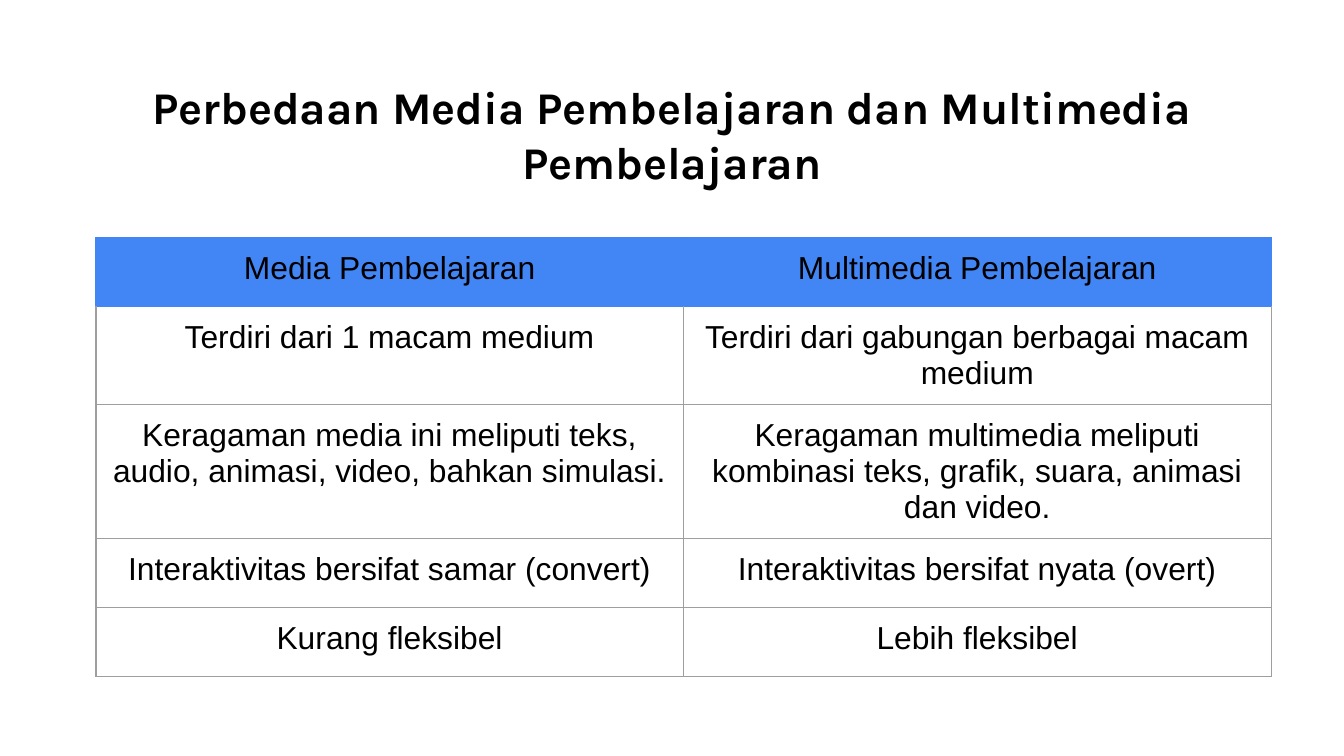
from typing import NamedTuple

from lxml.etree import SubElement
from pptx import Presentation
from pptx.dml.color import RGBColor
from pptx.enum.text import MSO_ANCHOR as Anchor, PP_ALIGN as Align
from pptx.oxml.ns import qn
from pptx.util import Pt

COLORS = {"text": "000000", "header": "4285F4", "grid": "9E9E9E"}
INSET = Pt(7.2)
MARGINS = {f"margin_{side}": INSET for side in ("left", "top", "right", "bottom")}
TITLE_FONT = {"name": "Karla", "size": Pt(24.3), "bold": True}
CELL_FONT = {"name": "Arial", "size": Pt(17), "bold": False}
COLUMN_WIDTH = Pt(314.8)


class Comparison(NamedTuple):
    media: str
    multimedia: str
    height: float


COMPARISONS = [
    Comparison("Media Pembelajaran", "Multimedia Pembelajaran", 37),
    Comparison("Terdiri dari 1 macam medium",
               "Terdiri dari gabungan berbagai macam medium", 51.5),
    Comparison("Keragaman media ini meliputi teks, audio, animasi, video, bahkan simulasi.",
               "Keragaman multimedia meliputi kombinasi teks, grafik, suara, animasi dan video.", 70),
    Comparison("Interaktivitas bersifat samar (convert)",
               "Interaktivitas bersifat nyata (overt)", 37),
    Comparison("Kurang fleksibel", "Lebih fleksibel", 37),
]


def apply_format(target, values: dict) -> None:
    for name, value in values.items():
        setattr(target, name, value)


def write_centered(text_frame, text: str, font_format: dict) -> None:
    text_frame.text = text
    paragraph = text_frame.paragraphs[0]
    paragraph.alignment = Align.CENTER
    font = paragraph.runs[0].font
    apply_format(font, font_format)
    font.color.rgb = RGBColor.from_string(COLORS["text"])


def set_borders(cell, colors: dict) -> None:
    """Draw the cell edges; colors maps L, R, T and B to a hex string."""
    properties = cell._tc.get_or_add_tcPr()
    for side, color in colors.items():
        line = SubElement(properties, qn(f"a:ln{side}"), w=str(Pt(0.75)))
        fill = SubElement(line, qn("a:solidFill"))
        SubElement(fill, qn("a:srgbClr"), val=color)


def add_title(slide, text: str) -> None:
    title = slide.shapes.title
    apply_format(title, {"left": Pt(24.5), "top": Pt(35.3),
                         "width": Pt(671), "height": Pt(45.4)})
    apply_format(title.text_frame, {**MARGINS, "word_wrap": True,
                                    "vertical_anchor": Anchor.TOP})
    write_centered(title.text_frame, text, TITLE_FONT)


def add_comparison_table(slide, comparisons: list[Comparison]) -> None:
    total_height = sum(comparison.height for comparison in comparisons)
    table = slide.shapes.add_table(len(comparisons), 2, Pt(51.4), Pt(127.2),
                                   2 * COLUMN_WIDTH, Pt(total_height)).table
    apply_format(table, {"first_row": False, "horz_banding": False})
    for column in table.columns:
        column.width = COLUMN_WIDTH
    for index, comparison in enumerate(comparisons):
        is_header = index == 0
        edge = COLORS["header" if is_header else "grid"]
        top_edge = COLORS["header" if index <= 1 else "grid"]
        table.rows[index].height = Pt(comparison.height)
        for column_index, text in enumerate((comparison.media, comparison.multimedia)):
            cell = table.cell(index, column_index)
            apply_format(cell, {**MARGINS, "vertical_anchor": Anchor.TOP})
            write_centered(cell.text_frame, text, CELL_FONT)
            set_borders(cell, {"L": edge, "R": edge, "T": top_edge, "B": COLORS["header"] if is_header else edge})
            if is_header:
                cell.fill.solid()
                cell.fill.fore_color.rgb = RGBColor.from_string(COLORS["header"])
            else:
                cell.fill.background()


def main() -> None:
    presentation = Presentation()
    apply_format(presentation, {"slide_width": Pt(720), "slide_height": Pt(405)})
    slide = presentation.slides.add_slide(presentation.slide_layouts[5])
    add_title(slide, "Perbedaan Media Pembelajaran dan Multimedia Pembelajaran")
    add_comparison_table(slide, COMPARISONS)
    presentation.save("out.pptx")


if __name__ == "__main__":
    main()
